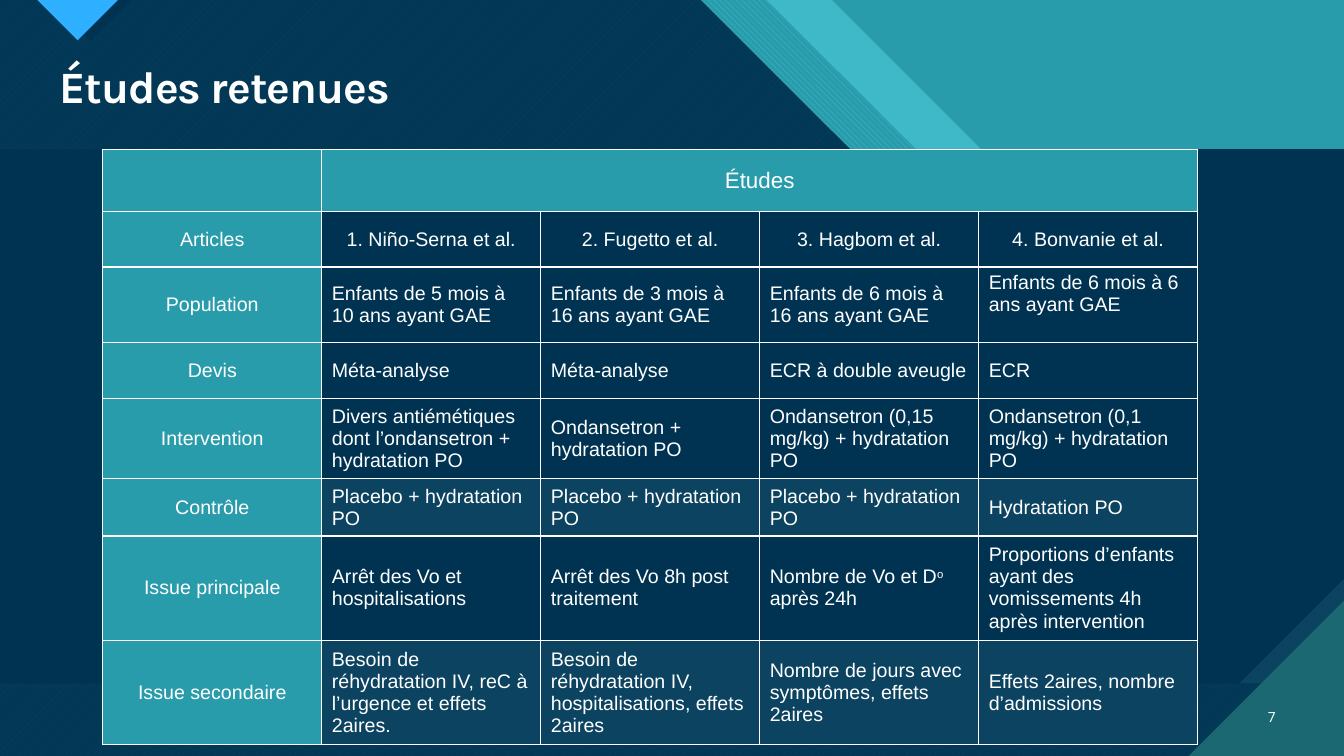
from dataclasses import dataclass

from lxml import etree
from pptx import Presentation
from pptx import util as u
from pptx.dml.color import RGBColor
from pptx.enum import dml, text
from pptx.oxml.ns import qn
from pptx.util import Inches


@dataclass(frozen=True)
class Theme:
    navy: str = "003352"
    slate: str = "0C4360"
    teal: str = "299CAB"
    aqua: str = "47C3D3"
    pine: str = "1B6872"
    sky: str = "2FAFFF"
    white: str = "FFFFFF"
    big: int = 32
    head: int = 16
    body: int = 14
    small: int = 10


T = Theme()
PAT = dml.MSO_PATTERN
MID = text.MSO_ANCHOR.MIDDLE
ALIGN = text.PP_ALIGN

HEIGHTS = [0.62, 0.55, 0.75, 0.55, 0.76, 0.55, 0.98, 0.98]
ROWS = [
    ["", "Études", "", "", ""],
    ["Articles", "1. Niño-Serna et al.", "2. Fugetto et al.",
     "3. Hagbom et al.", "4. Bonvanie et al."],
    ["Population", "Enfants de 5 mois à 10 ans ayant GAE",
     "Enfants de 3 mois à 16 ans ayant GAE",
     "Enfants de 6 mois à 16 ans ayant GAE",
     "Enfants de 6 mois à 6 ans ayant GAE"],
    ["Devis", "Méta-analyse", "Méta-analyse", "ECR à double aveugle", "ECR"],
    ["Intervention", "Divers antiémétiques dont l’ondansetron + hydratation PO",
     "Ondansetron + hydratation PO",
     "Ondansetron (0,15 mg/kg) + hydratation PO",
     "Ondansetron (0,1 mg/kg) + hydratation PO"],
    ["Contrôle", *["Placebo + hydratation PO"] * 3, "Hydratation PO"],
    ["Issue principale", "Arrêt des Vo et hospitalisations",
     "Arrêt des Vo 8h post traitement", "Nombre de Vo et D^o^ après 24h",
     "Proportions d’enfants ayant des vomissements 4h après intervention"],
    ["Issue secondaire",
     "Besoin de réhydratation IV, reC à l’urgence et effets 2aires.",
     "Besoin de réhydratation IV, hospitalisations, effets 2aires",
     "Nombre de jours avec symptômes, effets 2aires",
     "Effets 2aires, nombre d’admissions"],
]
SHADED = (5, 7)


def rgb(code):
    return RGBColor.from_string(code)


def poly(slide, pts, color, back=None, hatch=None, alpha=None):
    """Closed outline with a plain, see-through or hatched fill."""
    pts = [(Inches(x), Inches(y)) for x, y in pts]
    pen = slide.shapes.build_freeform(*pts[0])
    pen.add_line_segments(pts[1:], close=True)
    shape = pen.convert_to_shape()
    shape.shadow.inherit = False
    shape.line.fill.background()
    if hatch:
        shape.fill.patterned()
        shape.fill.pattern = hatch
        shape.fill.back_color.rgb = rgb(back)
    else:
        shape.fill.solid()
    shape.fill.fore_color.rgb = rgb(color)
    if alpha:
        tint = shape._element.spPr.find(".//" + qn("a:srgbClr"))
        etree.SubElement(tint, qn("a:alpha")).set("val", str(alpha * 1000))


def style(para, size, face="Arial", align=ALIGN.LEFT, bold=False):
    para.alignment = align
    font = para.font
    font.name, font.size, font.bold = face, u.Pt(size), bold
    font.color.rgb = rgb(T.white)


def label(slide, box, words, size, face, **look):
    frame = slide.shapes.add_textbox(*map(Inches, box)).text_frame
    frame.word_wrap = True
    frame.vertical_anchor = MID
    para = frame.paragraphs[0]
    para.text = words
    style(para, size, face, **look)
    return para


def border(cell):
    props = cell._tc.get_or_add_tcPr()
    for i, side in enumerate(("lnL", "lnR", "lnT", "lnB")):
        line = etree.Element(qn("a:" + side), w=str(u.Pt(1)))
        fill = etree.SubElement(line, qn("a:solidFill"))
        etree.SubElement(fill, qn("a:srgbClr")).set("val", T.white)
        props.insert(i, line)


def write(cell, words, size, align):
    """Fill a cell; text between carets is raised."""
    para = cell.text_frame.paragraphs[0]
    for i, part in enumerate(words.split("^")):
        if part:
            run = para.add_run()
            run.text = part
            if i % 2:
                run._r.get_or_add_rPr().set("baseline", "30000")
    style(para, size, align=align)


def backdrop(slide):
    fill = slide.background.fill
    fill.solid()
    fill.fore_color.rgb = rgb(T.teal)
    # Diagonal bands, from right to left
    poly(slide, [(0, 0), (8.25, 0), (11.22, 2.97), (12.34, 2.97),
                 (13.33, 3.96), (13.33, 7.5), (0, 7.5)], T.aqua, alpha=74)
    poly(slide, [(0.66, 0), (7.6, 0), (10.58, 2.97), (11.84, 2.97),
                 (13.33, 4.47), (13.33, 7.5), (0.66, 7.5)],
         T.aqua, T.teal, PAT.WIDE_DOWNWARD_DIAGONAL)
    front = [(0, 0), (6.95, 0), (9.92, 2.97), (11.18, 2.97),
             (13.33, 5.12), (13.33, 7.5), (0, 7.5)]
    poly(slide, front, T.aqua, T.pine, PAT.WIDE_UPWARD_DIAGONAL)
    poly(slide, front, T.navy, alpha=90)
    # Top marker and its shade
    poly(slide, [(0.48, 0), (1.31, 0), (0.9, 0.41)], T.navy)
    poly(slide, [(0.37, 0), (1.17, 0), (0.77, 0.4)], T.sky)
    # Body panel with a cut corner
    poly(slide, [(0, 1.48), (13.33, 1.48), (13.33, 6.78), (0, 6.78)], T.slate)
    poly(slide, [(0, 1.48), (13.33, 1.48), (13.33, 5.74), (12.29, 6.78),
                 (0, 6.78)], T.navy)
    poly(slide, [(11.79, 7.5), (13.33, 7.5), (13.33, 5.96)], T.pine)


def studies(slide):
    box = map(Inches, (1.02, 1.48, 10.86, sum(HEIGHTS)))
    table = slide.shapes.add_table(len(ROWS), len(ROWS[0]), *box).table
    table.first_row = table.horz_banding = False
    for row, high in zip(table.rows, HEIGHTS):
        row.height = Inches(high)
    for r, row in enumerate(ROWS):
        for c, words in enumerate(row):
            cell = table.cell(r, c)
            cell.vertical_anchor = MID
            if r == 0 or c == 0:
                cell.fill.solid()
                cell.fill.fore_color.rgb = rgb(T.teal)
            elif r in SHADED:
                cell.fill.solid()
                cell.fill.fore_color.rgb = rgb(T.slate)
            else:
                cell.fill.background()
            border(cell)
            align = ALIGN.CENTER if r < 2 or c == 0 else ALIGN.LEFT
            write(cell, words, T.body if r else T.head, align)
    table.cell(0, 1).merge(table.cell(0, 4))
    table.cell(2, 4).vertical_anchor = text.MSO_ANCHOR.TOP


def main():
    deck = Presentation()
    deck.slide_width, deck.slide_height = Inches(13.33), Inches(7.5)
    slide = deck.slides.add_slide(deck.slide_layouts[6])
    backdrop(slide)
    # Title
    title = label(slide, (0.49, 0.59, 12.26, 0.59), "Études retenues",
                  T.big, "Karla", bold=True)
    title.line_spacing = 0.9
    title.runs[0]._r.get_or_add_rPr().set("spc", "-70")
    studies(slide)
    # Page number
    label(slide, (12.31, 6.91, 0.44, 0.4), "7", T.small, "Roboto",
          align=ALIGN.RIGHT)
    deck.save("out.pptx")


if __name__ == "__main__":
    main()
